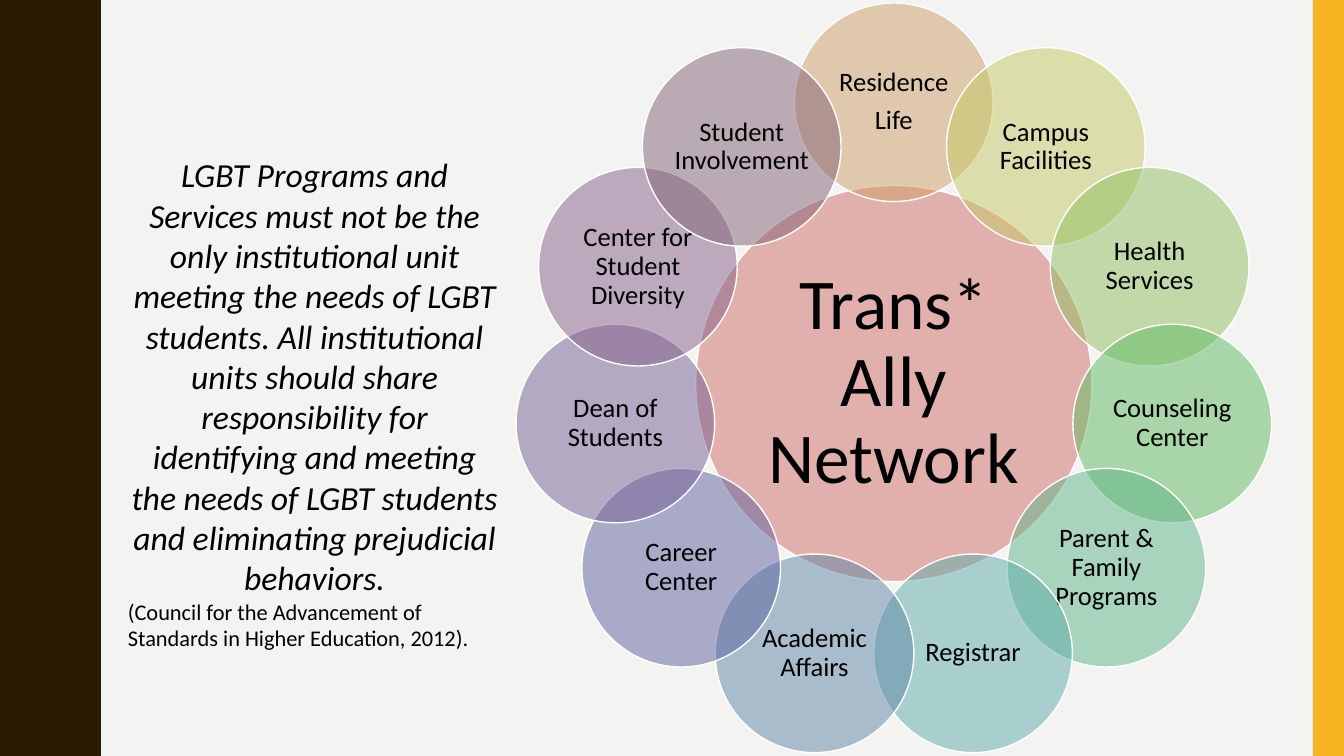
"""Builds a slide of campus units circling the Trans* Ally Network."""
import math
from dataclasses import dataclass

from lxml import etree
from pptx import Presentation, util as u
from pptx.dml.color import RGBColor
from pptx.enum import shapes, text
from pptx.oxml.ns import qn


@dataclass(frozen=True)
class Theme:
    font: str = "Calibri"
    background: str = "F3F3F2"
    wave: str = "2A1A00"
    band: str = "F8B323"
    hub: str = "D36F68"
    outline: str = "FFFFFF"
    ink: str = "000000"
    hub_size: int = 51
    unit_size: int = 19
    quote_size: int = 24
    source_size: int = 16


@dataclass(frozen=True)
class Unit:
    lines: tuple[str, ...]
    color: str


THEME = Theme()
WIDTH, HEIGHT = 13.33, 7.5
CENTER_X, CENTER_Y, ORBIT = 8.865, 3.805, 2.79
HUB_DIAMETER, UNIT_DIAMETER = 3.93, 1.97
UNITS = [
    Unit(("Residence", "Life"), "CD9F66"),
    Unit(("Campus Facilities",), "C5C864"),
    Unit(("Health Services",), "90C162"),
    Unit(("Counseling Center",), "61BB60"),
    Unit(("Parent & Family Programs",), "5FB488"),
    Unit(("Registrar",), "5EADAA"),
    Unit(("Academic Affairs",), "5E86A6"),
    Unit(("Career Center",), "5E639E"),
    Unit(("Dean of Students",), "756094"),
    Unit(("Center for Student Diversity",), "86618B"),
    Unit(("Student Involvement",), "826276"),
]
WAVE_PERIOD, WAVE_COUNT = 1.5, 5
HALF_WAVE = [(0.78, 0), (0.78, 0.07), (0.79, 0.14), (0.8, 0.2), (0.81, 0.25),
             (0.83, 0.29), (0.85, 0.33), (0.87, 0.38), (0.89, 0.42), (0.91, 0.46),
             (0.93, 0.5), (0.95, 0.55), (0.96, 0.61), (0.97, 0.68)]
QUOTE = ("LGBT Programs and Services must not be the only institutional unit meeting "
         "the needs of LGBT students. All institutional units should share responsibility "
         "for identifying and meeting the needs of LGBT students and eliminating "
         "prejudicial behaviors.")
SOURCE = "(Council for the Advancement of Standards in Higher Education, 2012)."


def paint(sp, color: str) -> None:
    """Give a shape a plain fill without line or shadow."""
    sp.shadow.inherit = False
    sp.fill.solid()
    sp.fill.fore_color.rgb = RGBColor.from_string(color)
    sp.line.fill.background()


def write(p, content: str, *, size: int, italic: bool = False,
          align=text.PP_ALIGN.CENTER, spacing: float = 1, after: float = 0) -> None:
    """Write one formatted run into a paragraph."""
    p.alignment = align
    p.line_spacing = spacing
    p.space_after = u.Pt(after)
    r = p.add_run()
    r.text = content
    r.font.name = THEME.font
    r.font.size = u.Pt(size)
    r.font.italic = italic
    r.font.color.rgb = RGBColor.from_string(THEME.ink)


def add_circle(s, x: float, y: float, diameter: float, lines: tuple[str, ...],
               *, color: str, size: int, inset: float) -> None:
    """Draw a half-transparent labelled circle centred on a point."""
    sp = s.shapes.add_shape(
        shapes.MSO_SHAPE.OVAL, u.Inches(x - diameter / 2), u.Inches(y - diameter / 2),
        u.Inches(diameter), u.Inches(diameter))
    paint(sp, color)
    fill = sp.element.spPr.find(qn("a:solidFill")).find(qn("a:srgbClr"))
    etree.SubElement(fill, qn("a:alpha")).set("val", "50000")
    sp.line.color.rgb = RGBColor.from_string(THEME.outline)
    sp.line.width = u.Pt(1)
    tf = sp.text_frame
    tf.word_wrap = True
    tf.vertical_anchor = text.MSO_ANCHOR.MIDDLE
    tf.margin_left = tf.margin_right = tf.margin_top = tf.margin_bottom = u.Inches(inset)
    for i, line in enumerate(lines):
        p = tf.add_paragraph() if i else tf.paragraphs[0]
        write(p, line, size=size, spacing=0.9, after=0.35 * size)


def add_edges(s) -> None:
    """Draw the wavy left edge and the right band."""
    crest = WAVE_PERIOD / 2
    rising = HALF_WAVE + [(0.97, crest)]
    wave = rising + [(x, WAVE_PERIOD - y) for x, y in reversed(HALF_WAVE[1:])]
    edge = [(x, y + i * WAVE_PERIOD) for i in range(WAVE_COUNT) for x, y in wave]
    builder = s.shapes.build_freeform(0, 0, scale=u.Inches(1))
    builder.add_line_segments(edge + [(0.78, HEIGHT), (0, HEIGHT)], close=True)
    paint(builder.convert_to_shape(), THEME.wave)
    band = s.shapes.add_shape(shapes.MSO_SHAPE.RECTANGLE, u.Inches(13.02), 0,
                              u.Inches(0.31), u.Inches(HEIGHT))
    paint(band, THEME.band)


def add_network(s) -> None:
    """Draw the hub and the ring of units, clockwise from the top."""
    add_circle(s, CENTER_X, CENTER_Y, HUB_DIAMETER, ("Trans* Ally Network",),
               color=THEME.hub, size=THEME.hub_size, inset=0.07)
    for i, unit in enumerate(UNITS):
        angle = math.tau * i / len(UNITS)
        add_circle(s, CENTER_X + ORBIT * math.sin(angle), CENTER_Y - ORBIT * math.cos(angle),
                   UNIT_DIAMETER, unit.lines, color=unit.color,
                   size=THEME.unit_size, inset=0.03)


def add_quote(s) -> None:
    """Place the quotation and its source."""
    sp = s.shapes.add_textbox(u.Inches(1.17), u.Inches(1.48), u.Inches(3.9), u.Inches(4.98))
    tf = sp.text_frame
    tf.word_wrap = True
    tf.auto_size = text.MSO_AUTO_SIZE.SHAPE_TO_FIT_TEXT
    write(tf.paragraphs[0], QUOTE, size=THEME.quote_size, italic=True)
    write(tf.add_paragraph(), SOURCE, size=THEME.source_size, align=text.PP_ALIGN.LEFT)


def main() -> None:
    """Build and save the slide."""
    prs = Presentation()
    prs.slide_width, prs.slide_height = u.Inches(WIDTH), u.Inches(HEIGHT)
    s = prs.slides.add_slide(prs.slide_layouts[6])
    s.background.fill.solid()
    s.background.fill.fore_color.rgb = RGBColor.from_string(THEME.background)
    add_edges(s)
    add_network(s)
    add_quote(s)
    prs.save("out.pptx")


if __name__ == "__main__":
    main()
